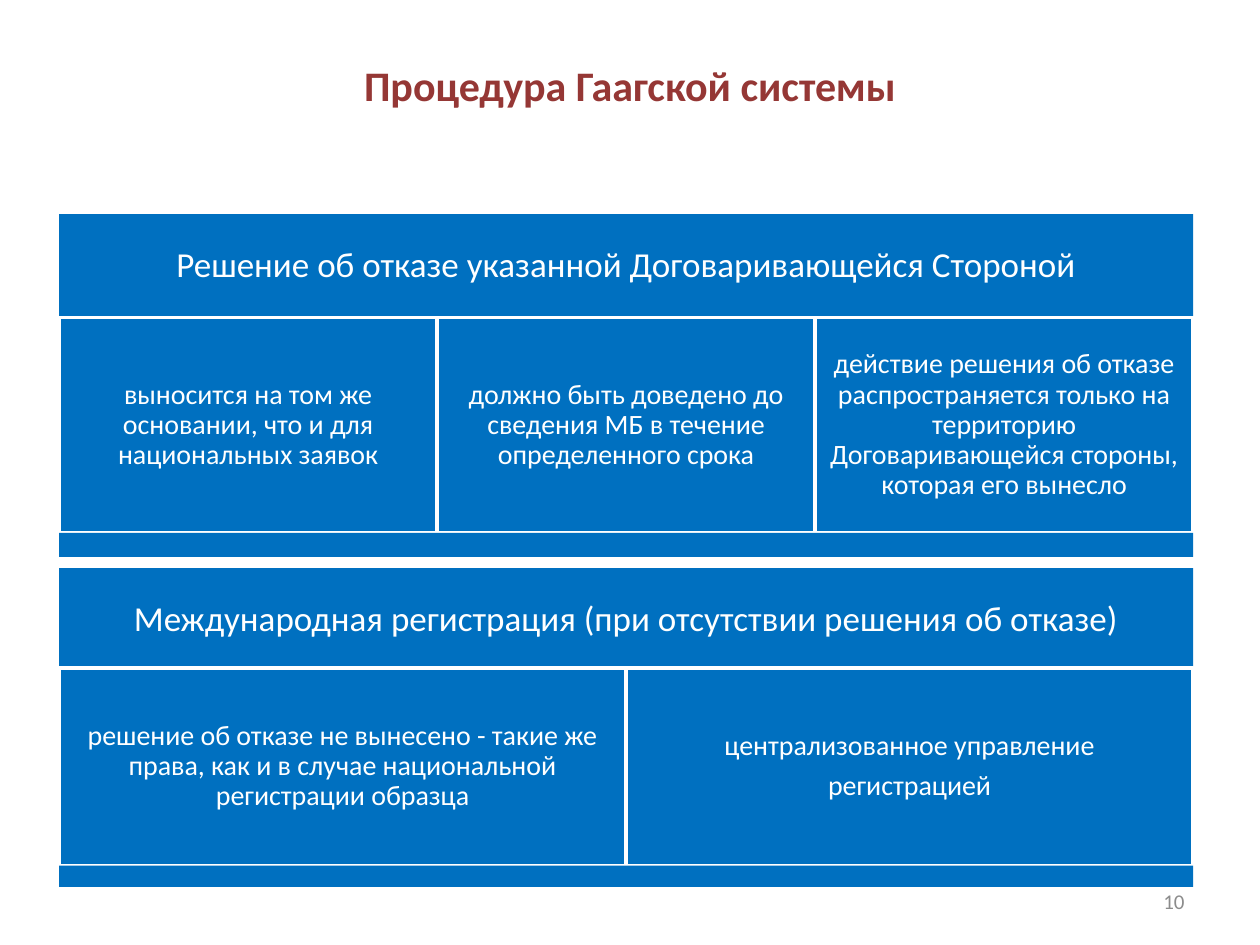
from dataclasses import dataclass

from pptx import Presentation
from pptx.dml.color import RGBColor
from pptx.enum.shapes import MSO_SHAPE
from pptx.enum.text import MSO_ANCHOR, PP_ALIGN
from pptx.shapes.group import GroupShape
from pptx.slide import Slide
from pptx.text.text import TextFrame
from pptx.util import Pt

RECT = MSO_SHAPE.RECTANGLE
MIDDLE = MSO_ANCHOR.MIDDLE
CENTER = PP_ALIGN.CENTER
RIGHT = PP_ALIGN.RIGHT
SCALE = 9144
LEFT, WIDTH = 47, 900


@dataclass(frozen=True)
class Theme:
    font: str = "Calibri"
    blue: str = "0070C0"
    white: str = "FFFFFF"
    red: str = "953735"
    gray: str = "8C8C8C"
    title: int = 24
    head: int = 20
    body: int = 16
    small: int = 12


@dataclass(frozen=True)
class Box:
    x: int
    y: int
    w: int
    h: int

    def emu(self) -> tuple[int, ...]:
        return tuple(px(n) for n in (self.x, self.y, self.w, self.h))


@dataclass(frozen=True)
class Panel:
    top: int
    mid: int
    foot: int
    end: int
    head: str
    cells: tuple[str, ...]


THEME = Theme()
PANELS = (
    Panel(170, 252, 423, 442, "Решение об отказе указанной Договаривающейся Стороной", (
        "выносится на том же основании, что и для национальных заявок",
        "должно быть доведено до сведения МБ в течение определенного срока",
        "действие решения об отказе распространяется только на территорию "
        "Договаривающейся стороны, которая его вынесло",
    )),
    Panel(451, 530, 687, 704, "Международная регистрация (при отсутствии решения об отказе)", (
        "решение об отказе не вынесено - такие же права, как и в случае "
        "национальной регистрации образца",
        "централизованное управление\nрегистрацией",
    )),
)


def px(count: int) -> int:
    return count * SCALE


def write(frame: TextFrame, text: str, size: int, color: str,
          align: PP_ALIGN = CENTER, bold: bool = False) -> None:
    frame.text = text
    frame.word_wrap = True
    frame.vertical_anchor = MIDDLE
    for para in frame.paragraphs:
        para.alignment = align
        for run in para.runs:
            run.font.name = THEME.font
            run.font.size = Pt(size)
            run.font.bold = bold
            run.font.color.rgb = RGBColor.from_string(color)


def draw_block(group: GroupShape, box: Box, text: str = "", size: int = THEME.body,
               inset: int = 7, edge: bool = False) -> None:
    shape = group.shapes.add_shape(RECT, *box.emu())
    shape.shadow.inherit = False
    shape.fill.solid()
    shape.fill.fore_color.rgb = RGBColor.from_string(THEME.blue)
    if edge:
        shape.line.color.rgb = RGBColor.from_string(THEME.white)
        shape.line.width = Pt(2)
    else:
        shape.line.fill.background()
    if not text:
        return
    frame = shape.text_frame
    write(frame, text, size, THEME.white)
    frame.margin_left = frame.margin_right = px(inset)
    frame.margin_top = frame.margin_bottom = px(inset)
    for para in frame.paragraphs:
        para.line_spacing = 0.9
        para.space_after = Pt(size * 0.35)


def draw_panel(slide: Slide, panel: Panel) -> None:
    group = slide.shapes.add_group_shape()
    draw_block(group, Box(LEFT, panel.top, WIDTH, 82), panel.head, THEME.head, 8)
    step = WIDTH // len(panel.cells)
    for i, text in enumerate(panel.cells):
        box = Box(LEFT + i * step, panel.mid, step, panel.foot - panel.mid)
        draw_block(group, box, text, edge=True)
    draw_block(group, Box(LEFT, panel.foot, WIDTH, panel.end - panel.foot))


def main() -> None:
    deck = Presentation()
    deck.slide_width, deck.slide_height = px(1000), px(750)
    slide = deck.slides.add_slide(deck.slide_layouts[5])
    title = slide.shapes.title
    title.left, title.top, title.width, title.height = Box(50, 25, 900, 84).emu()
    write(title.text_frame, "Процедура Гаагской системы", THEME.title, THEME.red, bold=True)
    for panel in PANELS:
        draw_panel(slide, panel)
    number = slide.shapes.add_textbox(*Box(717, 695, 233, 40).emu())
    write(number.text_frame, "10", THEME.small, THEME.gray, RIGHT)
    deck.save("out.pptx")


if __name__ == "__main__":
    main()
